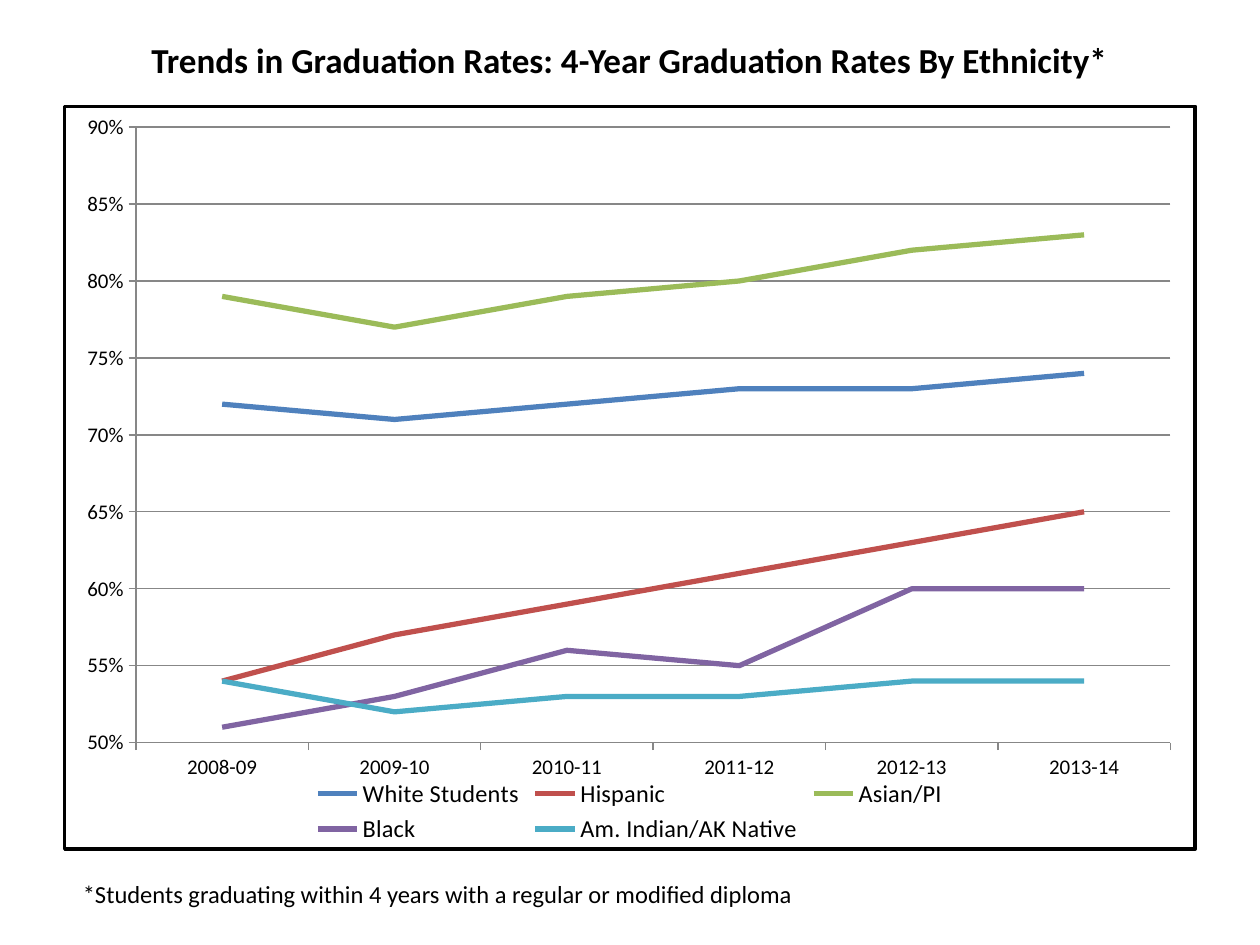
from lxml import etree
from pptx import Presentation
from pptx.chart.data import CategoryChartData
from pptx.dml.color import RGBColor
from pptx.enum.chart import XL_CHART_TYPE, XL_LEGEND_POSITION, XL_MARKER_STYLE, XL_TICK_MARK
from pptx.enum.text import MSO_ANCHOR, PP_ALIGN
from pptx.oxml import parse_xml
from pptx.oxml.ns import nsdecls, qn
from pptx.util import Cm, Pt

LINE = XL_CHART_TYPE.LINE
BOTTOM = XL_LEGEND_POSITION.BOTTOM
NO_MARKER = XL_MARKER_STYLE.NONE
OUTSIDE = XL_TICK_MARK.OUTSIDE
MIDDLE = MSO_ANCHOR.MIDDLE
CENTER, LEFT = PP_ALIGN.CENTER, PP_ALIGN.LEFT

FONT, BLACK, GRAY = "Calibri", "000000", "878787"
YEARS = ["2008-09", "2009-10", "2010-11", "2011-12", "2012-13", "2013-14"]
RATES = [
    ("White Students", "4F81BD", [0.72, 0.71, 0.72, 0.73, 0.73, 0.74]),
    ("Hispanic", "C0504D", [0.54, 0.57, 0.59, 0.61, 0.63, 0.65]),
    ("Asian/PI", "9BBB59", [0.79, 0.77, 0.79, 0.80, 0.82, 0.83]),
    ("Black", "8064A2", [0.51, 0.53, 0.56, 0.55, 0.60, 0.60]),
    ("Am. Indian/AK Native", "4BACC6", [0.54, 0.52, 0.53, 0.53, 0.54, 0.54]),
]


def style_font(font, size, color=BLACK, bold=False):
    font.name, font.size, font.bold = FONT, Pt(size), bold
    font.color.rgb = RGBColor.from_string(color)


def write(sp, text, size, align, bold=False):
    tf = sp.text_frame
    tf.vertical_anchor = MIDDLE
    p = tf.paragraphs[0]
    p.alignment = align
    r = p.add_run()
    r.text = text
    style_font(r.font, size, bold=bold)
    return tf


prs = Presentation()
prs.slide_width, prs.slide_height = Cm(25.4), Cm(19.05)
s = prs.slides.add_slide(prs.slide_layouts[5])

# Title
title = s.shapes.title
title.left, title.top, title.width, title.height = Cm(2.74), Cm(0.64), Cm(19.9), Cm(1.11)
write(title, "Trends in Graduation Rates: 4-Year Graduation Rates By Ethnicity*", 20, CENTER, bold=True)

# Chart
data = CategoryChartData(number_format="0%")
data.categories = YEARS
for name, color, rates in RATES:
    data.add_series(name, rates)
chart = s.shapes.add_chart(LINE, Cm(1.27), Cm(2.11), Cm(22.86), Cm(15.04), data).chart
chart.has_title = False
style_font(chart.font, 10)

for series, (name, color, rates) in zip(chart.plots[0].series, RATES):
    series.smooth = False
    series.marker.style = NO_MARKER
    series.format.line.width = Pt(3)
    series.format.line.color.rgb = RGBColor.from_string(color)

# Axes and gridlines
val_axis, cat_axis = chart.value_axis, chart.category_axis
val_axis.minimum_scale, val_axis.maximum_scale, val_axis.major_unit = 0.5, 0.9, 0.05
val_axis.has_major_gridlines = True
val_axis.tick_labels.number_format = "0%"
val_axis.tick_labels.number_format_is_linked = False
for axis in (val_axis, cat_axis):
    axis.major_tick_mark = OUTSIDE
    style_font(axis.tick_labels.font, 12)
for part in (val_axis, cat_axis, val_axis.major_gridlines):
    part.format.line.width = Pt(0.75)
    part.format.line.color.rgb = RGBColor.from_string(GRAY)

# Legend
chart.has_legend = True
chart.legend.position = BOTTOM
chart.legend.include_in_layout = False
style_font(chart.legend.font, 14)

# Inner plot area, as fractions of the chart
plot_area = chart.element.chart.plotArea
for old in plot_area.findall(qn("c:layout")):
    plot_area.remove(old)
layout = parse_xml(f"<c:layout {nsdecls('c')}><c:manualLayout/></c:layout>")
settings = [("layoutTarget", "inner"), ("xMode", "edge"), ("yMode", "edge"),
            ("x", "0.063"), ("y", "0.028"), ("w", "0.915"), ("h", "0.829")]
for tag, val in settings:
    etree.SubElement(layout[0], qn(f"c:{tag}")).set("val", val)
plot_area.insert(0, layout)

# Chart frame
chart.element.chart.addnext(parse_xml(
    f'<c:spPr {nsdecls("c", "a")}><a:noFill/><a:ln w="{Pt(2)}"><a:solidFill>'
    f'<a:srgbClr val="{BLACK}"/></a:solidFill></a:ln></c:spPr>'))

# Footnote
note = s.shapes.add_textbox(Cm(1.42), Cm(17.58), Cm(14.96), Cm(0.86))
tf = write(note, "*Students graduating within 4 years with a regular or modified diploma", 14, LEFT)
tf.word_wrap = False

prs.save("out.pptx")
